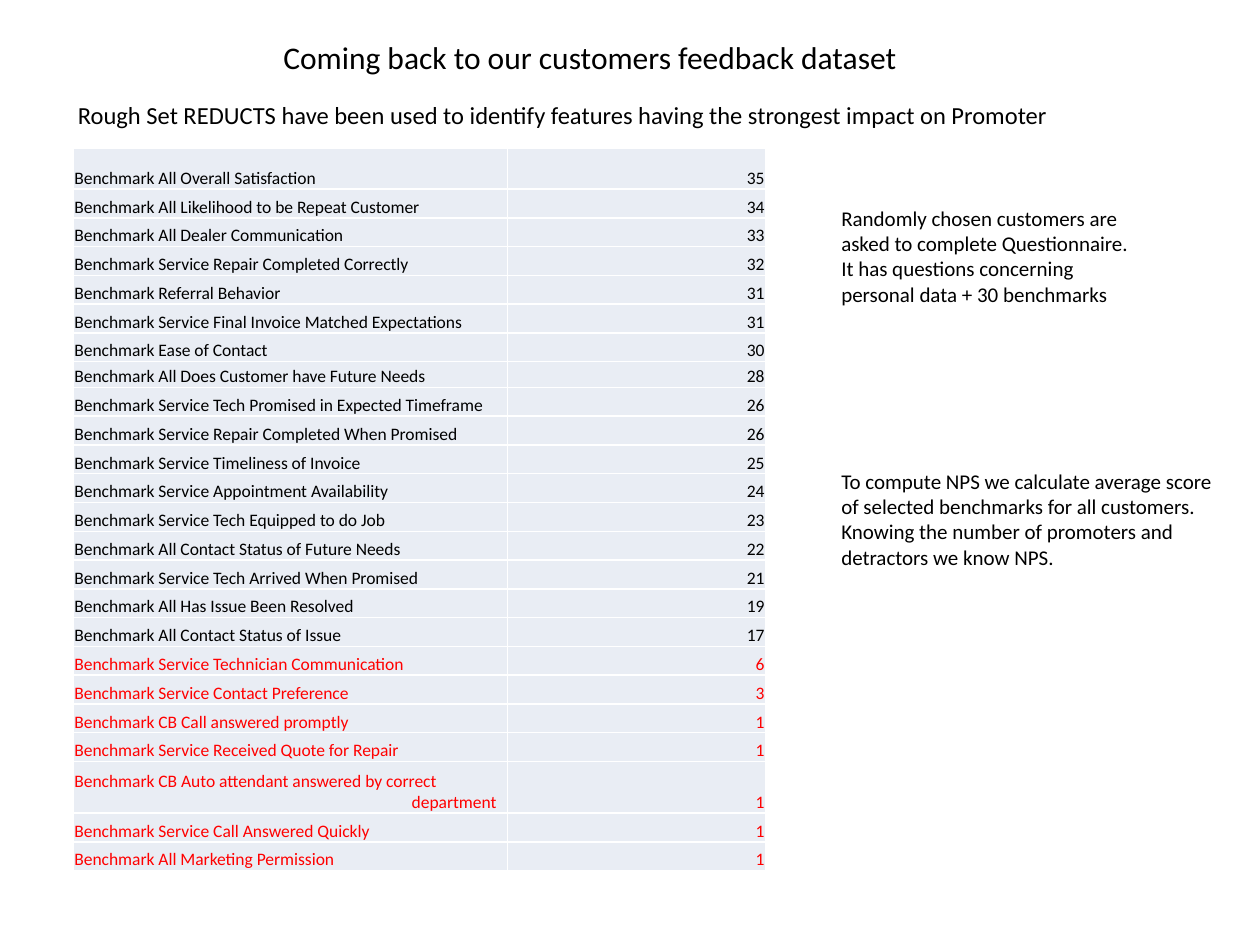
"""Build the customer feedback slide with its table of benchmark scores."""
import dataclasses

import pptx
import pptx.dml.color
import pptx.enum.text
import pptx.util

Cm = pptx.util.Cm
ALIGN = pptx.enum.text.PP_ALIGN
ANCHOR = pptx.enum.text.MSO_ANCHOR
AUTO_SIZE = pptx.enum.text.MSO_AUTO_SIZE

FONT = "Calibri"
BLACK = "000000"
RED = "FF0000"
CELL_FILL = "E9EDF4"
LOW_SCORE = 10
ROW_HEIGHT = 0.58
LABEL_WIDTH = 8.75
SCORE_WIDTH = 5.2


@dataclasses.dataclass(frozen=True)
class Benchmark:
    name: str
    score: int
    height: float = ROW_HEIGHT


@dataclasses.dataclass(frozen=True)
class Note:
    left: float
    top: float
    width: float
    height: float
    text: str
    size: int = 12
    wrap: bool = True


BENCHMARKS = [
    Benchmark("All Overall Satisfaction", 35, height=0.83),
    Benchmark("All Likelihood to be Repeat Customer", 34),
    Benchmark("All Dealer Communication", 33),
    Benchmark("Service Repair Completed Correctly", 32),
    Benchmark("Referral Behavior", 31),
    Benchmark("Service Final Invoice Matched Expectations", 31),
    Benchmark("Ease of Contact", 30),
    Benchmark("All Does Customer have Future Needs", 28, height=0.52),
    Benchmark("Service Tech Promised in Expected Timeframe", 26),
    Benchmark("Service Repair Completed When Promised", 26),
    Benchmark("Service Timeliness of Invoice", 25),
    Benchmark("Service Appointment Availability", 24),
    Benchmark("Service Tech Equipped to do Job", 23),
    Benchmark("All Contact Status of Future Needs", 22),
    Benchmark("Service Tech Arrived When Promised", 21),
    Benchmark("All Has Issue Been Resolved", 19),
    Benchmark("All Contact Status of Issue", 17),
    Benchmark("Service Technician Communication", 6),
    Benchmark("Service Contact Preference", 3),
    Benchmark("CB Call answered promptly", 1),
    Benchmark("Service Received Quote for Repair", 1),
    Benchmark("CB Auto attendant answered by correct\ndepartment", 1, height=1.04),
    Benchmark("Service Call Answered Quickly", 1),
    Benchmark("All Marketing Permission", 1),
]

NOTES = [
    Note(16.71, 4.02, 6.78, 3.07,
         "Randomly chosen customers are\nasked to complete Questionnaire.\n"
         "It has questions concerning\npersonal data + 30 benchmarks"),
    Note(16.71, 9.32, 8.89, 2.31,
         "To compute NPS we calculate average score\n"
         "of selected benchmarks for all customers.\n"
         "Knowing the number of promoters and\ndetractors we know NPS."),
    Note(1.32, 1.9, 20.37, 0.86,
         "Rough Set REDUCTS have been used to identify features "
         "having the strongest impact on Promoter", size=14, wrap=False),
]


def rgb(value: str) -> pptx.dml.color.RGBColor:
    return pptx.dml.color.RGBColor.from_string(value)


def write_text(frame, text: str, *, size: float, color: str = BLACK,
               align=ALIGN.LEFT, hanging: float = 0) -> None:
    for index, line in enumerate(text.split("\n")):
        paragraph = frame.paragraphs[0] if index == 0 else frame.add_paragraph()
        paragraph.alignment = align
        if index and hanging:
            paragraph._p.get_or_add_pPr().set("marL", str(Cm(hanging)))
        run = paragraph.add_run()
        run.text = line
        run.font.name = FONT
        run.font.size = pptx.util.Pt(size)
        run.font.color.rgb = rgb(color)


def add_title(slide, text: str) -> None:
    title = slide.shapes.title
    title.left, title.top, title.width, title.height = Cm(5.38), Cm(0.64), Cm(13.03), Cm(1.02)
    title.text_frame.auto_size = AUTO_SIZE.NONE
    title.text_frame.word_wrap = False
    write_text(title.text_frame, text, size=18, align=ALIGN.CENTER)


def add_note(slide, note: Note) -> None:
    shape = slide.shapes.add_textbox(Cm(note.left), Cm(note.top), Cm(note.width), Cm(note.height))
    shape.text_frame.word_wrap = note.wrap
    shape.text_frame.auto_size = AUTO_SIZE.SHAPE_TO_FIT_TEXT
    write_text(shape.text_frame, note.text, size=note.size)


def fill_cell(cell, text: str, *, color: str, align, hanging: float = 0) -> None:
    cell.fill.solid()
    cell.fill.fore_color.rgb = rgb(CELL_FILL)
    cell.vertical_anchor = ANCHOR.BOTTOM
    cell.margin_left = cell.margin_right = cell.margin_top = Cm(0.02)
    cell.margin_bottom = 0
    write_text(cell.text_frame, text, size=10, color=color, align=align, hanging=hanging)


def add_benchmark_table(slide, benchmarks: list[Benchmark]) -> None:
    height = sum(benchmark.height for benchmark in benchmarks)
    shape = slide.shapes.add_table(len(benchmarks), 2, Cm(1.48), Cm(2.98),
                                   Cm(LABEL_WIDTH + SCORE_WIDTH), Cm(height))
    table = shape.table
    table.first_row = table.horz_banding = False
    table.columns[0].width = Cm(LABEL_WIDTH)
    table.columns[1].width = Cm(SCORE_WIDTH)
    for index, benchmark in enumerate(benchmarks):
        table.rows[index].height = Cm(benchmark.height)
        color = RED if benchmark.score < LOW_SCORE else BLACK
        fill_cell(table.cell(index, 0), f"Benchmark {benchmark.name}",
                  color=color, align=ALIGN.LEFT, hanging=6.8)
        fill_cell(table.cell(index, 1), str(benchmark.score), color=color, align=ALIGN.RIGHT)


def main() -> None:
    presentation = pptx.Presentation()
    presentation.slide_width, presentation.slide_height = Cm(25.4), Cm(19.05)
    slide = presentation.slides.add_slide(presentation.slide_layouts.get_by_name("Title Only"))
    add_benchmark_table(slide, BENCHMARKS)
    for note in NOTES:
        add_note(slide, note)
    add_title(slide, "Coming back to our customers feedback dataset")
    presentation.save("out.pptx")


if __name__ == "__main__":
    main()
